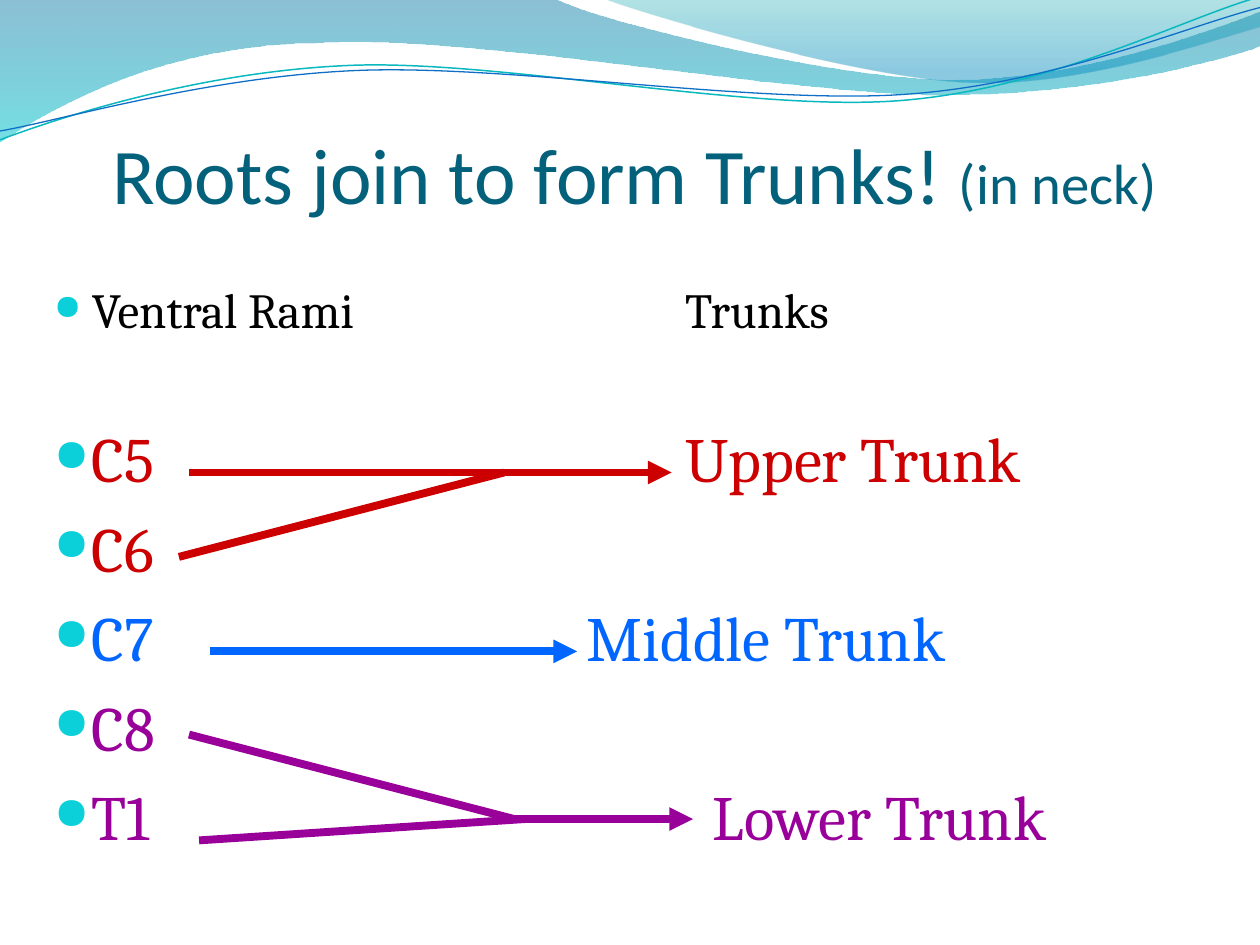
from lxml.etree import SubElement as Sub
from pptx import Presentation
from pptx.dml.color import RGBColor as RGB
from pptx.enum.shapes import MSO_CONNECTOR as Conn
from pptx.enum.text import MSO_ANCHOR as Anchor
from pptx.oxml.ns import qn
from pptx.util import Inches, Pt

TEAL = RGB(0x04, 0x61, 0x7B)
CYAN = RGB(0x0B, 0xD0, 0xD9)
BLACK = RGB(0, 0, 0)
RED = RGB(0xCC, 0, 0)
BLUE = RGB(0, 0x66, 0xFF)
PURPLE = RGB(0x99, 0, 0x99)
AQUA = RGB(0x0A, 0xB8, 0xBF)
NAVY = RGB(0x0F, 0x6F, 0xC6)
DEEP = RGB(0, 0x74, 0xA1)
BRIGHT = RGB(0, 0xC6, 0xCF)
GREEN = RGB(0, 0xA1, 0xA9)
SKY = RGB(0, 0x8B, 0xBF)

BANDS = [
    ([(0, -0.01), (4.4, -0.01),
      (4.76, 0.17, 6.64, 0.63, 7.58, 0.63), (8.53, 0.63, 9.58, 0.26, 10, 0.09),
      (10.01, 0.36), (9.83, 0.44, 8.7, 0.76, 7.46, 0.75),
      (6.22, 0.75, 3.82, 0.28, 2.57, 0.34), (1.29, 0.35, 0.46, 0.83, -0.01, 1.13)],
     [(0, DEEP, 45), (1, BRIGHT, 55)]),
    ([(4.79, -0.01), (5.09, 0.11, 6.82, 0.62, 7.69, 0.65),
      (8.56, 0.69, 9.61, 0.32, 10, 0.21), (10, 0)],
     [(0, GREEN, 30), (0.8, SKY, 45)]),
]
WAVES = [
    ([(0, 1.11), (0.48, 0.93, 1.58, 0.57, 2.77, 0.52),
      (3.95, 0.47, 5.93, 0.89, 7.13, 0.8), (8.33, 0.71, 9.38, 0.15, 9.98, -0.02)],
     AQUA, 0.85),
    ([(0, 1.04), (0.47, 0.96, 1.64, 0.61, 2.83, 0.56),
      (4.03, 0.51, 5.97, 0.83, 7.17, 0.75), (8.36, 0.67, 9.41, 0.21, 10, 0.06)],
     NAVY, 0.75),
]
ROWS = [
    ("Ventral Rami", "Trunks", 5.01, 28, BLACK, 0),
    ("C5", "Upper Trunk", 5.01, 36, RED, 46.4),
    ("C6", "", 0, 36, RED, 8),
    ("C7", "Middle Trunk", 4.23, 36, BLUE, 8),
    ("C8", "", 0, 36, PURPLE, 8),
    ("T1", "Lower Trunk", 5.23, 36, PURPLE, 8),
]
LINES = [
    (1.17, 3.66, 3.75, 4.33, PURPLE, False),
    (1.25, 4.5, 3.84, 4.33, PURPLE, False),
    (3.75, 4.33, 5.17, 4.33, PURPLE, True),
    (1.34, 3, 4.25, 3, BLUE, True),
    (1.17, 1.58, 3.75, 1.58, RED, False),
    (1.09, 2.25, 3.67, 1.58, RED, False),
    (3.67, 1.58, 5, 1.58, RED, True),
]


def draw(slide, left, top, steps, close):
    """Draw an outline of straight sides and cubic curves."""
    pts = [(Inches(left + step[i]), Inches(top + step[i + 1]))
           for step in steps for i in range(0, len(step), 2)]
    form = slide.shapes.build_freeform(*pts[0])
    form.add_line_segments(pts[1:], close=close)
    shape = form.convert_to_shape()
    shape.shadow.inherit = False
    sides = iter(list(shape._element.spPr.iter(qn("a:lnTo"))))
    for step in steps[1:]:
        side = next(sides)
        if len(step) == 6:
            side.tag = qn("a:cubicBezTo")
            for _ in range(2):
                extra = next(sides)
                side.append(extra[0])
                extra.getparent().remove(extra)
    return shape


def add_header(slide, left, top):
    """Draw the shaded bands and thin waves."""
    for steps, stops in BANDS:
        shape = draw(slide, left, top, steps, True)
        shape.line.fill.background()
        shape.fill.gradient()
        shape.fill.gradient_angle = 270
        for stop, (pos, color, _) in zip(shape.fill.gradient_stops, stops):
            stop.position = pos
            stop.color.rgb = color
        tints = shape._element.spPr.iter(qn("a:srgbClr"))
        for tint, (_, _, alpha) in zip(tints, stops):
            Sub(tint, qn("a:alpha"), val=str(alpha * 1000))
    for steps, color, width in WAVES:
        shape = draw(slide, left, top, steps, False)
        shape.fill.background()
        shape.line.color.rgb = color
        shape.line.width = Pt(width)


def add_run(para, text, size, name, color):
    """Add one styled run."""
    run = para.add_run()
    run.text = text
    run.font.size = Pt(size)
    run.font.name = name
    run.font.color.rgb = color


def add_title(slide, left, top, width, height):
    """Place the title."""
    box = slide.shapes.add_textbox(
        Inches(left), Inches(top), Inches(width), Inches(height))
    frame = box.text_frame
    frame.word_wrap = True
    frame.vertical_anchor = Anchor.BOTTOM
    frame.margin_left = Inches(0.14)
    frame.margin_right = frame.margin_bottom = 0
    para = frame.paragraphs[0]
    add_run(para, "Roots join to form Trunks! ", 45, "Calibri", TEAL)
    add_run(para, "(in neck)", 32.4, "Calibri", TEAL)


def add_bullet(para, stop):
    """Give a paragraph its bullet, hanging indent and tab stop."""
    props = para._p.get_or_add_pPr()
    props.set("marL", str(Inches(0.3)))
    props.set("indent", str(-Inches(0.3)))
    Sub(Sub(props, qn("a:buClr")), qn("a:srgbClr"), val=str(CYAN))
    Sub(props, qn("a:buSzPct"), val="71000")
    Sub(props, qn("a:buChar"), char="●")
    if stop:
        tabs = Sub(props, qn("a:tabLst"))
        Sub(tabs, qn("a:tab"), pos=str(Inches(stop)), algn="l")


def add_body(slide, left, top, width, height):
    """List the roots with their trunks."""
    box = slide.shapes.add_textbox(
        Inches(left), Inches(top), Inches(width), Inches(height))
    frame = box.text_frame
    frame.word_wrap = True
    for i, (root, trunk, stop, size, color, gap) in enumerate(ROWS):
        para = frame.add_paragraph() if i else frame.paragraphs[0]
        add_bullet(para, stop)
        para.space_before = Pt(gap)
        text = f"{root}\t{trunk}" if trunk else root
        add_run(para, text, size, "Cambria", color)


def add_lines(slide, left, top):
    """Join the roots to their trunks."""
    for x1, y1, x2, y2, color, arrow in LINES:
        line = slide.shapes.add_connector(
            Conn.STRAIGHT, Inches(left + x1), Inches(top + y1),
            Inches(left + x2), Inches(top + y2))
        line.line.color.rgb = color
        line.line.width = Pt(4.5)
        if arrow:
            Sub(line.line._get_or_add_ln(), qn("a:tailEnd"), type="triangle")
        Sub(line._element.spPr, qn("a:effectLst"))


def main():
    """Build and save the slide."""
    deck = Presentation()
    deck.slide_width, deck.slide_height = Inches(10), Inches(7.5)
    slide = deck.slides.add_slide(deck.slide_layouts[6])
    add_header(slide, 0, 0)
    add_title(slide, 0.75, 0.5, 9, 1.25)
    add_body(slide, 0.33, 2.17, 8.92, 4.5)
    add_lines(slide, 0.33, 2.17)
    deck.save("out.pptx")


if __name__ == "__main__":
    main()
